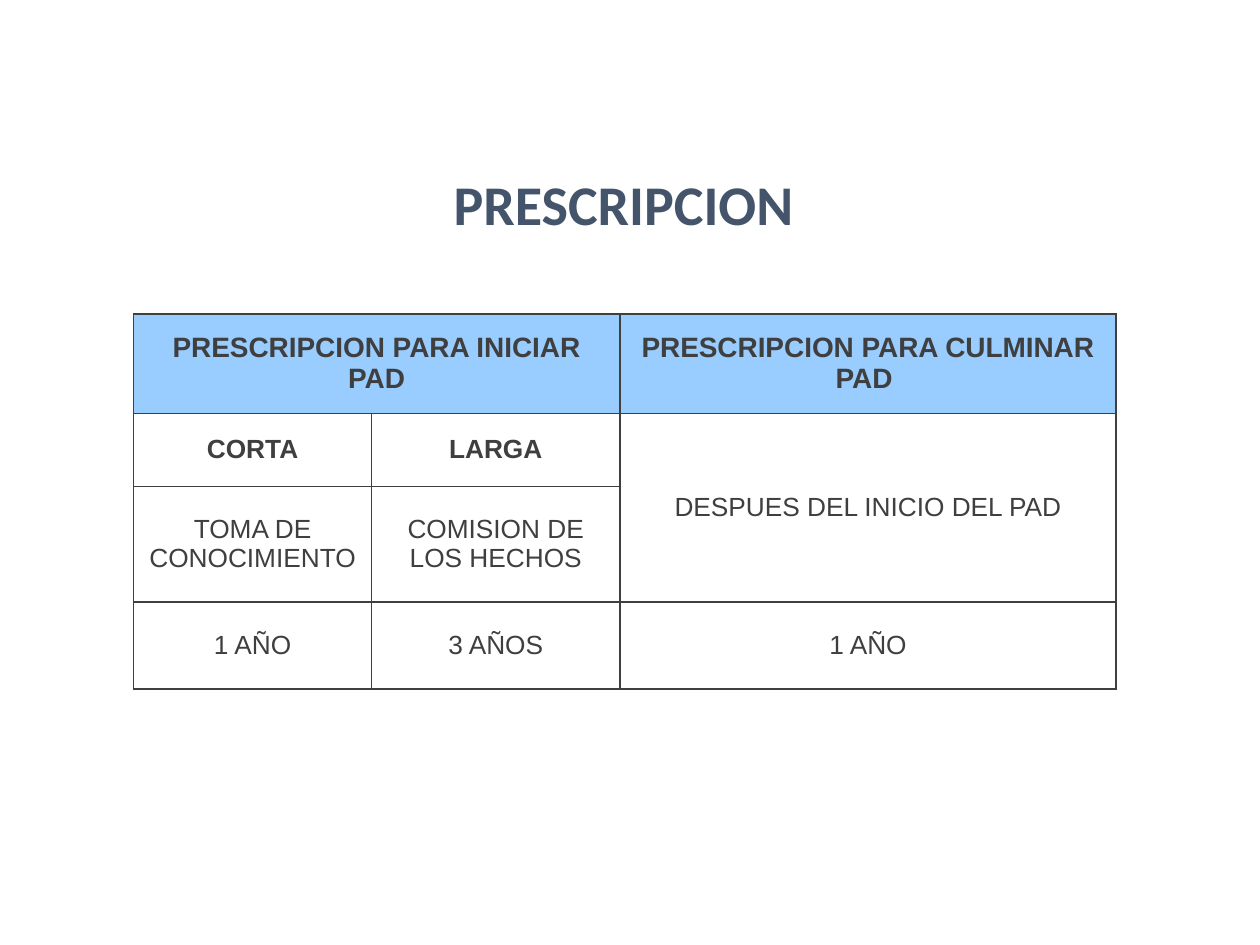
"""Build the PRESCRIPCION slide: a title above a table of limitation periods."""
import lxml.etree
import pptx
import pptx.dml.color
import pptx.enum.text
import pptx.oxml.ns
import pptx.util

COLORS = {"title": "44546A", "ink": "3F3F3F", "header": "99CCFF", "body": "FFFFFF"}
SLIDE_WIDTH, SLIDE_HEIGHT = 10, 7.5
TITLE_BOX = (0.26, 1.29, 9.48, 0.64)
TABLE_BOX = (1.06, 2.49, 7.8, 2.98)
COLUMN_SHARES = (1.89 / 7.8, 1.97 / 7.8, 3.94 / 7.8)
ROW_SHARES = (0.79 / 2.98, 0.58 / 2.98, 0.92 / 2.98, 0.69 / 2.98)
PERIODS = (
    ("PRESCRIPCION PARA INICIAR PAD", "", "PRESCRIPCION PARA CULMINAR PAD "),
    ("CORTA", "LARGA", "DESPUES DEL INICIO DEL PAD"),
    ("TOMA DE CONOCIMIENTO", "COMISION DE LOS HECHOS", ""),
    ("1 AÑO", "3 AÑOS", "1 AÑO"),
)
MERGES = (((0, 0), (0, 1)), ((1, 2), (2, 2)))


def color(name):
    """Return the named colour."""
    return pptx.dml.color.RGBColor.from_string(COLORS[name])


def format_text(frame, font_name, size, ink, bold):
    """Centre the text of a frame and set its font."""
    frame.vertical_anchor = pptx.enum.text.MSO_ANCHOR.MIDDLE
    for para in frame.paragraphs:
        para.alignment = pptx.enum.text.PP_ALIGN.CENTER
        for span in para.runs:
            span.font.name = font_name
            span.font.size = pptx.util.Pt(size)
            span.font.bold = bold
            span.font.color.rgb = color(ink)


def add_borders(cell):
    """Draw a one-point line on each side of a cell."""
    properties = cell._tc.get_or_add_tcPr()
    qn = pptx.oxml.ns.qn
    for side in ("lnL", "lnR", "lnT", "lnB"):
        line = lxml.etree.SubElement(properties, qn(f"a:{side}"), w=str(pptx.util.Pt(1)))
        fill = lxml.etree.SubElement(line, qn("a:solidFill"))
        lxml.etree.SubElement(fill, qn("a:srgbClr"), val=COLORS["ink"])


def place_title(page, box):
    """Set the title in the given box."""
    title = page.shapes.title
    title.left, title.top, title.width, title.height = map(pptx.util.Inches, box)
    title.text_frame.text = "PRESCRIPCION "
    title.text_frame.word_wrap = True
    format_text(title.text_frame, "Calibri", 32, "title", True)


def place_table(page, box):
    """Fill the given box with the table of periods."""
    left, top, width, height = map(pptx.util.Inches, box)
    table = page.shapes.add_table(
        len(ROW_SHARES), len(COLUMN_SHARES), left, top, width, height
    ).table
    for column, share in zip(table.columns, COLUMN_SHARES):
        column.width = int(width * share)
    for row, share in zip(table.rows, ROW_SHARES):
        row.height = int(height * share)
    for start, end in MERGES:
        table.cell(*start).merge(table.cell(*end))
    for row_index, texts in enumerate(PERIODS):
        for column_index, text in enumerate(texts):
            cell = table.cell(row_index, column_index)
            is_header = row_index == 0
            add_borders(cell)
            cell.fill.solid()
            cell.fill.fore_color.rgb = color("header" if is_header else "body")
            cell.vertical_anchor = pptx.enum.text.MSO_ANCHOR.MIDDLE
            if text:
                cell.text_frame.text = text
                bold = is_header or text in ("CORTA", "LARGA")
                format_text(cell.text_frame, "Arial", 16 if is_header else 15, "ink", bold)


def main():
    """Build and save the deck."""
    deck = pptx.Presentation()
    deck.slide_width = pptx.util.Inches(SLIDE_WIDTH)
    deck.slide_height = pptx.util.Inches(SLIDE_HEIGHT)
    page = deck.slides.add_slide(deck.slide_layouts.get_by_name("Title Only"))
    place_title(page, TITLE_BOX)
    place_table(page, TABLE_BOX)
    deck.save("out.pptx")


if __name__ == "__main__":
    main()
